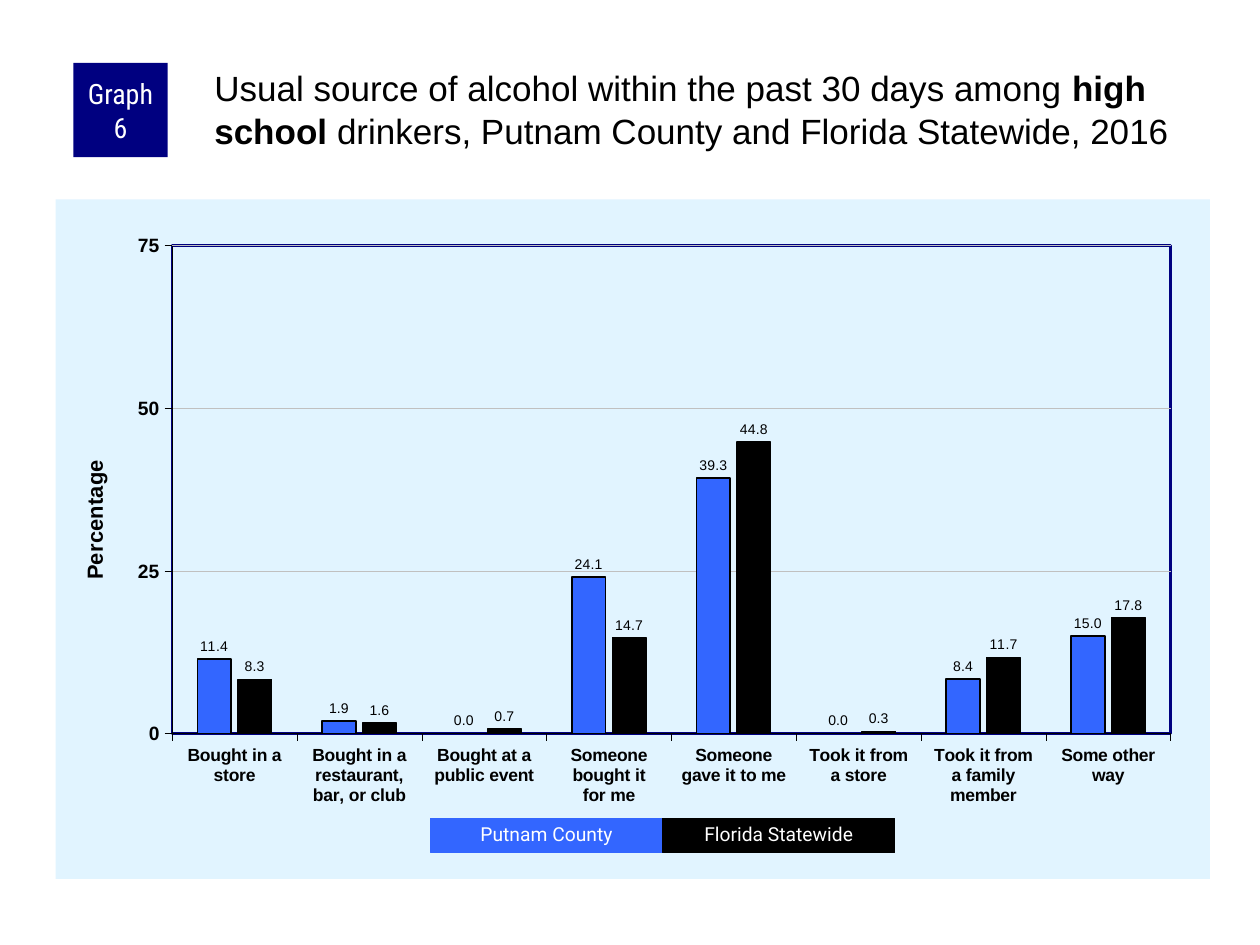
from lxml import etree
from pptx import Presentation
from pptx import util as u
from pptx.chart import data as cd
from pptx.dml.color import RGBColor
from pptx.enum import chart as ch, shapes, text
from pptx.oxml import parse_xml
from pptx.oxml.ns import nsdecls, qn

NAVY, BLUE, BLACK, WHITE = "000080", "3366FF", "000000", "FFFFFF"
PALE, GREY = "E1F4FF", "C0C0C0"

SOURCES = {
    "Bought in a store": (11.4, 8.3),
    "Bought in a restaurant, bar, or club": (1.9, 1.6),
    "Bought at a public event": (0, 0.7),
    "Someone bought it\nfor me": (24.1, 14.7),
    "Someone\ngave it to me": (39.3, 44.8),
    "Took it from\na store": (0, 0.3),
    "Took it from\na family member": (8.4, 11.7),
    "Some other way": (15, 17.8),
}
AREAS = [("Putnam County", BLUE, 1), ("Florida Statewide", BLACK, 0.75)]


def rgb(value):
    return RGBColor.from_string(value)


def box(left, top, width, height):
    return [u.Cm(n) for n in (left, top, width, height)]


def set_font(font, size, color=BLACK, bold=False, name="Arial"):
    font.name, font.size, font.bold = name, u.Pt(size), bold
    font.color.rgb = rgb(color)


def set_line(line, color, width):
    line.color.rgb = rgb(color)
    line.width = u.Pt(width)


def area_format(fill, line=""):
    return parse_xml(f'<c:spPr {nsdecls("c", "a")}>{fill}{line or "<a:ln><a:noFill/></a:ln>"}</c:spPr>')


def solid(color):
    return f'<a:solidFill><a:srgbClr val="{color}"/></a:solidFill>'


class Deck:
    def __init__(self):
        self.prs = Presentation()
        self.prs.slide_width, self.prs.slide_height = u.Cm(25.4), u.Cm(19.05)
        self.s = self.prs.slides.add_slide(self.prs.slide_layouts[5])

    def title(self, runs, *place):
        sp = self.s.shapes.title
        sp.left, sp.top, sp.width, sp.height = box(*place)
        tf = sp.text_frame
        tf.word_wrap, tf.auto_size = True, text.MSO_AUTO_SIZE.NONE
        tf.vertical_anchor = text.MSO_ANCHOR.TOP
        tf.margin_left = tf.margin_top = u.Cm(0.08)
        tf.margin_right = tf.margin_bottom = 0
        p = tf.paragraphs[0]
        p.alignment = text.PP_ALIGN.LEFT
        set_font(p.font, 20)
        for words, bold in runs:
            r = p.add_run()
            r.text, r.font.bold = words, bold

    def block(self, words, fill, size, font, *place, spacing=1, border=0):
        sp = self.s.shapes.add_shape(shapes.MSO_SHAPE.RECTANGLE, *box(*place))
        sp.shadow.inherit = False
        sp.fill.solid()
        sp.fill.fore_color.rgb = rgb(fill)
        if border:
            set_line(sp.line, fill, border)
        else:
            sp.line.fill.background()
        tf = sp.text_frame
        tf.word_wrap = True
        tf.vertical_anchor = text.MSO_ANCHOR.MIDDLE
        tf.margin_left = tf.margin_right = u.Cm(0.13)
        tf.margin_top = tf.margin_bottom = 0
        p = tf.paragraphs[0]
        p.text, p.alignment, p.line_spacing = words, text.PP_ALIGN.CENTER, spacing
        set_font(p.font, size, WHITE, name=font)

    def columns(self, *place):
        data = cd.CategoryChartData(number_format="0.0")
        data.categories = list(SOURCES)
        for (name, _, _), values in zip(AREAS, zip(*SOURCES.values())):
            data.add_series(name, values)
        chart = self.s.shapes.add_chart(
            ch.XL_CHART_TYPE.COLUMN_CLUSTERED, *box(*place), data).chart
        chart.has_legend = chart.has_title = False
        set_font(chart.font, 11.5)
        plot = chart.plots[0]
        plot.gap_width, plot.overlap, plot.vary_by_categories = 150, -20, False
        for series, (_, color, width) in zip(plot.series, AREAS):
            series.format.fill.solid()
            series.format.fill.fore_color.rgb = rgb(color)
            set_line(series.format.line, BLACK, width)
            labels = series.data_labels
            labels.show_value = True
            labels.number_format, labels.number_format_is_linked = "0.0", False
            labels.position = ch.XL_LABEL_POSITION.OUTSIDE_END
            set_font(labels.font, 8)
        for axis, size in ((chart.category_axis, 10), (chart.value_axis, 11)):
            axis.major_tick_mark = ch.XL_TICK_MARK.OUTSIDE
            axis.minor_tick_mark = ch.XL_TICK_MARK.NONE
            set_font(axis.tick_labels.font, size, bold=True)
            set_line(axis.format.line, BLACK, 0.25)
        axis = chart.value_axis
        axis.minimum_scale, axis.maximum_scale, axis.major_unit = 0, 75, 25
        axis.tick_labels.number_format = "0"
        axis.tick_labels.number_format_is_linked = False
        set_line(axis.major_gridlines.format.line, GREY, 0.25)
        tf = axis.axis_title.text_frame
        tf.text = "Percentage"
        set_font(tf.paragraphs[0].font, 12.5, bold=True)
        self.frame(chart)

    def frame(self, chart):
        root = chart.element
        root.find(qn("c:chart")).addnext(area_format(solid(PALE)))
        area = root.find(".//" + qn("c:plotArea"))
        area.append(area_format("<a:noFill/>", f'<a:ln w="19050">{solid(NAVY)}</a:ln>'))
        for old in area.findall(qn("c:layout")):
            area.remove(old)
        layout = etree.Element(qn("c:layout"))
        manual = etree.SubElement(layout, qn("c:manualLayout"))
        for tag, value in (("layoutTarget", "inner"), ("xMode", "edge"), ("yMode", "edge"),
                           ("x", "0.101"), ("y", "0.068"), ("w", "0.865"), ("h", "0.718")):
            etree.SubElement(manual, qn("c:" + tag)).set("val", value)
        area.insert(0, layout)


def main():
    deck = Deck()
    deck.columns(1.12, 4.02, 23.27, 13.7)
    deck.block("Graph 6", NAVY, 16, "Roboto Condensed", 1.48, 1.27, 1.9, 1.9)
    deck.title([("Usual source of alcohol within the past 30 days among ", False),
                ("high school", True),
                (" drinkers, Putnam County and Florida Statewide, 2016", False)],
               4.24, 1.27, 20.12, 2.11)
    key_width = 4.68
    for i, (name, color, _) in enumerate(AREAS):
        deck.block(name, color, 11, "Roboto", 8.68 + i * key_width, 16.5, key_width, 0.69,
                   spacing=0.9, border=0.75)
    deck.prs.save("out.pptx")


if __name__ == "__main__":
    main()
